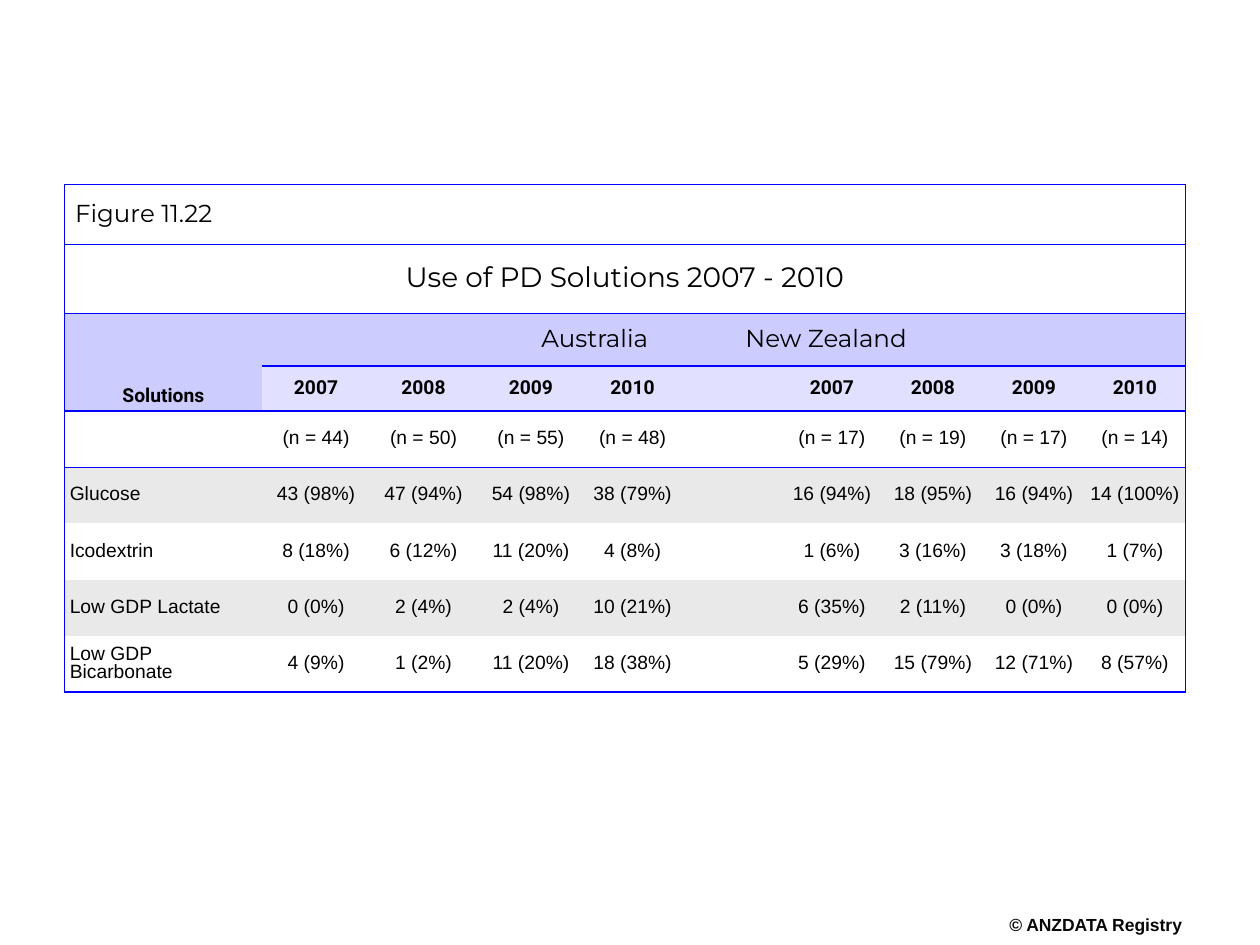
import pptx
import pptx.dml.color
import pptx.enum.text
import pptx.oxml.ns
import pptx.util
from lxml import etree

Pt = pptx.util.Pt
RGBColor = pptx.dml.color.RGBColor
ALIGN = pptx.enum.text.PP_ALIGN
ANCHOR = pptx.enum.text.MSO_ANCHOR
qn = pptx.oxml.ns.qn

BLACK = RGBColor(0x00, 0x00, 0x00)
INK = RGBColor(0x08, 0x08, 0x08)
BLUE = RGBColor(0x00, 0x00, 0xFF)
LAVENDER = RGBColor(0xCC, 0xCC, 0xFF)
PALE_LAVENDER = RGBColor(0xE1, 0xE1, 0xFF)
GREY = RGBColor(0xE9, 0xE9, 0xE9)

PLAIN_TABLE_STYLE = "{2D5ABB26-0587-4C30-8999-92F81FD0307C}"
COLUMN_WIDTHS = [113] + [61.4] * 3 + [54.7] + [57.7] * 5
ROW_HEIGHTS = [34.2, 39.4, 30.2, 25.7] + [32.1] * 5
COUNTRY_TABS = [156.5, 273]
GAP_COLUMN = 5

YEARS = ["2007", "2008", "2009", "2010"]
SOLUTIONS = [
    ["", "(n = 44)", "(n = 50)", "(n = 55)", "(n = 48)", "",
     "(n = 17)", "(n = 19)", "(n = 17)", "(n = 14)"],
    ["Glucose", "43 (98%)", "47 (94%)", "54 (98%)", "38 (79%)", "",
     "16 (94%)", "18 (95%)", "16 (94%)", "14 (100%)"],
    ["Icodextrin", "8 (18%)", "6 (12%)", "11 (20%)", "4 (8%)", "",
     "1 (6%)", "3 (16%)", "3 (18%)", "1 (7%)"],
    ["Low GDP Lactate", "0 (0%)", "2 (4%)", "2 (4%)", "10 (21%)", "",
     "6 (35%)", "2 (11%)", "0 (0%)", "0 (0%)"],
    ["Low GDP Bicarbonate", "4 (9%)", "1 (2%)", "11 (20%)", "18 (38%)", "",
     "5 (29%)", "15 (79%)", "12 (71%)", "8 (57%)"],
]


def write(paragraph, text, size, font, color=BLACK, bold=False, align=ALIGN.CENTER):
    paragraph.alignment = align
    paragraph.line_spacing = 0.85
    run = paragraph.add_run()
    run.text = text
    run.font.size = Pt(size)
    run.font.name = font
    run.font.bold = bold
    run.font.color.rgb = color


def fill_cell(cell, text, size=11, font="Arial", bold=False,
              align=ALIGN.CENTER, anchor=ANCHOR.MIDDLE, margin=3):
    cell.vertical_anchor = anchor
    cell.margin_left = cell.margin_right = Pt(margin)
    cell.margin_top = cell.margin_bottom = Pt(margin)
    paragraph = cell.text_frame.paragraphs[0]
    if text:
        write(paragraph, text, size, font, bold=bold, align=align)
    else:
        # Keep empty cells from stretching their row
        etree.SubElement(paragraph._p, qn("a:endParaRPr"), sz=str(size * 100))


def add_tab_stops(paragraph, positions):
    stops = etree.SubElement(paragraph._p.get_or_add_pPr(), qn("a:tabLst"))
    for position in positions:
        etree.SubElement(stops, qn("a:tab"), pos=str(Pt(position)), algn="l")


def draw_borders(cell, row, column):
    last_row, column_count = len(ROW_HEIGHTS) - 1, len(COLUMN_WIDTHS)
    edges = {
        "L": column == 0,
        "R": column + cell.span_width == column_count,
        "T": row <= 4 and (row, column) != (3, 0),
        "B": row <= 3 or row == last_row,
    }
    properties = cell._tc.get_or_add_tcPr()
    for side, visible in edges.items():
        if visible:
            line = etree.SubElement(properties, qn("a:ln" + side), w=str(Pt(1)))
            solid = etree.SubElement(line, qn("a:solidFill"))
            etree.SubElement(solid, qn("a:srgbClr"), val=str(BLUE))


def cell_color(row, column):
    if row == 2 or (row, column) == (3, 0):
        return LAVENDER
    if row == 3:
        return PALE_LAVENDER
    return GREY if row in (5, 7) else None


def add_solutions_table(slide, left, top, width, height):
    table = slide.shapes.add_table(
        len(ROW_HEIGHTS), len(COLUMN_WIDTHS),
        Pt(left), Pt(top), Pt(width), Pt(height)).table
    table.first_row = table.horz_banding = False
    table._tbl.tblPr.find(qn("a:tableStyleId")).text = PLAIN_TABLE_STYLE
    for column, share in zip(table.columns, COLUMN_WIDTHS):
        column.width = Pt(width * share / sum(COLUMN_WIDTHS))
    for row, share in zip(table.rows, ROW_HEIGHTS):
        row.height = Pt(height * share / sum(ROW_HEIGHTS))

    # Merged cells
    last_column = len(COLUMN_WIDTHS) - 1
    for first, last in [((0, 0), (0, last_column)), ((1, 0), (1, last_column)),
                        ((2, 0), (3, 0)), ((2, 1), (2, last_column))]:
        table.cell(*first).merge(table.cell(*last))

    # Borders and fills
    for row in range(len(ROW_HEIGHTS)):
        for column in range(len(COLUMN_WIDTHS)):
            cell = table.cell(row, column)
            draw_borders(cell, row, column)
            color = cell_color(row, column)
            if color is None:
                cell.fill.background()
            else:
                cell.fill.solid()
                cell.fill.fore_color.rgb = color

    # Figure number, title and headings
    fill_cell(table.cell(0, 0), "Figure 11.22", 14, "Montserrat",
              align=ALIGN.LEFT, margin=6)
    fill_cell(table.cell(1, 0), "Use of PD Solutions 2007 - 2010", 16, "Montserrat")
    fill_cell(table.cell(2, 0), "Solutions", font="Roboto", bold=True,
              anchor=ANCHOR.BOTTOM)
    countries = table.cell(2, 1)
    fill_cell(countries, "\tAustralia\tNew Zealand", 14, "Montserrat",
              align=ALIGN.LEFT)
    add_tab_stops(countries.text_frame.paragraphs[0], COUNTRY_TABS)
    for column, year in enumerate(YEARS + [""] + YEARS, start=1):
        fill_cell(table.cell(3, column), year, font="Roboto", bold=True)

    # Patient counts
    for row, values in enumerate(SOLUTIONS, start=4):
        for column, value in enumerate(values):
            cell = table.cell(row, column)
            fill_cell(cell, value, align=ALIGN.CENTER if column else ALIGN.LEFT)
            if column not in (0, GAP_COLUMN):
                cell.text_frame.paragraphs[0].space_after = Pt(14)


def add_copyright(slide, left, top, width, height):
    frame = slide.shapes.add_textbox(
        Pt(left), Pt(top), Pt(width), Pt(height)).text_frame
    frame.margin_left = frame.margin_right = 0
    frame.margin_top = frame.margin_bottom = 0
    frame.word_wrap = False
    write(frame.paragraphs[0], "© ANZDATA Registry", 10, "Arial", INK, bold=True)


def main():
    presentation = pptx.Presentation()
    presentation.slide_width, presentation.slide_height = Pt(720), Pt(540)
    slide = presentation.slides.add_slide(presentation.slide_layouts[6])
    add_copyright(slide, 575.3, 524.2, 101.5, 12.2)
    add_solutions_table(slide, 36.9, 105.5, 640.6, 290)
    presentation.save("out.pptx")


if __name__ == "__main__":
    main()
